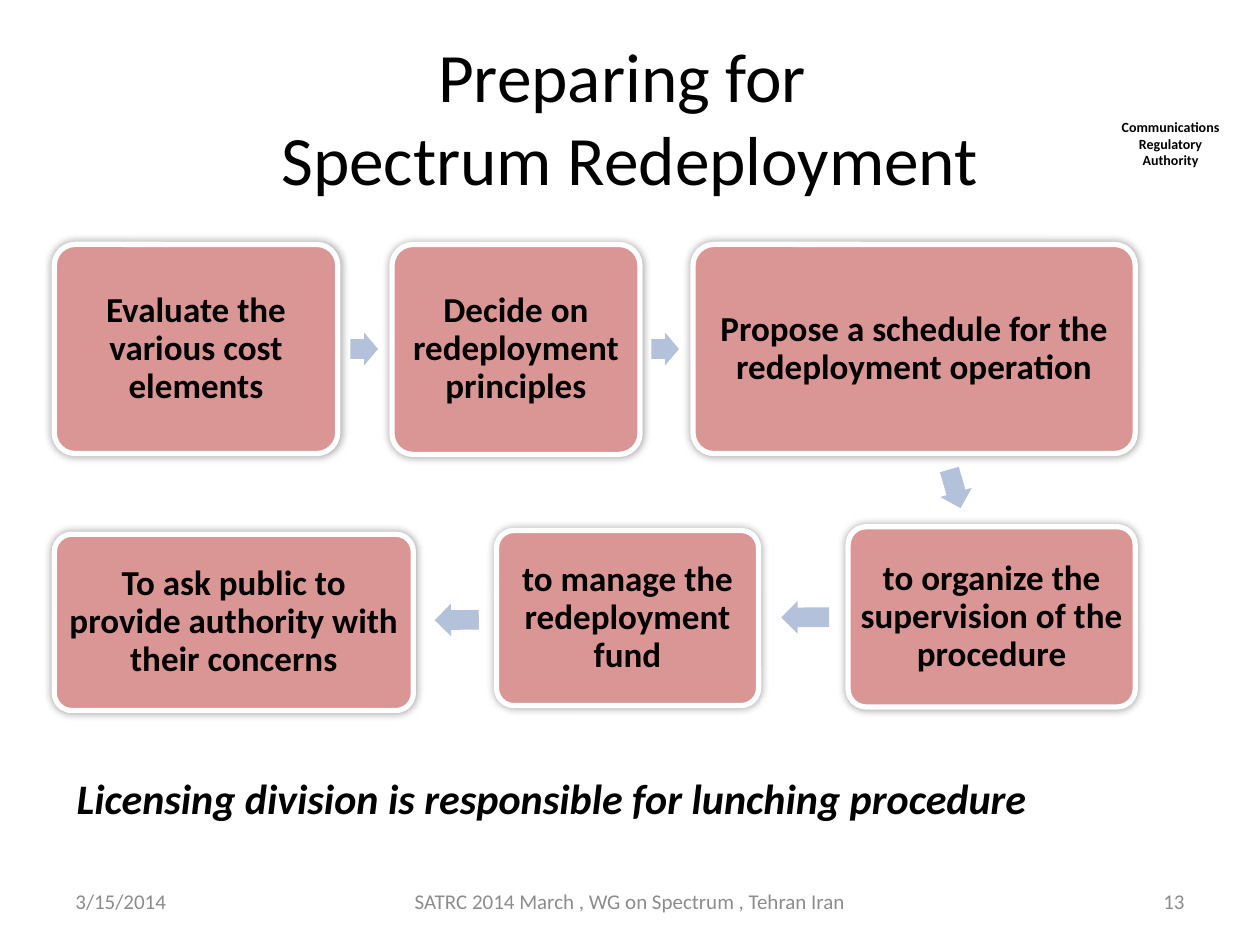
from dataclasses import dataclass

from lxml import etree
from pptx import Presentation
from pptx.dml.color import RGBColor
from pptx.enum import shapes, text
from pptx.oxml import ns
from pptx.util import Pt


@dataclass(frozen=True)
class Theme:
    font: str = "Calibri"
    ink: str = "000000"
    muted: str = "8C8C8C"
    step_fill: str = "D99694"
    step_line: str = "FFFFFF"
    arrow_fill: str = "B3C1DB"
    title_size: float = 39.6
    remark_size: float = 24
    step_size: float = 20
    footer_size: float = 12
    authority_size: float = 8


@dataclass(frozen=True)
class Box:
    left: float
    top: float
    width: float
    height: float

    def lengths(self):
        return Pt(self.left), Pt(self.top), Pt(self.width), Pt(self.height)


@dataclass(frozen=True)
class Step:
    wording: str
    box: Box


@dataclass(frozen=True)
class Arrow:
    left: float
    top: float
    length: float
    rotation: float = 0


THEME = Theme()
LEFT = text.PP_ALIGN.LEFT
CENTER = text.PP_ALIGN.CENTER
RIGHT = text.PP_ALIGN.RIGHT
MIDDLE = text.MSO_ANCHOR.MIDDLE
ARROW_HEIGHT = 18.7
STEP_INSET = 2.5

STEPS = [
    Step("Evaluate the various cost elements", Box(31, 139.7, 162, 119.5)),
    Step("Decide on redeployment principles", Box(224, 139.7, 141.8, 120)),
    Step("Propose a schedule for the redeployment operation", Box(396, 139.7, 252.7, 119.5)),
    Step("to organize the supervision of the procedure", Box(484.6, 301, 164.1, 103)),
    Step("to manage the redeployment fund", Box(283.7, 303.1, 149.8, 100.1)),
    Step("To ask public to provide authority with their concerns", Box(31, 305.3, 205.2, 100.8)),
]
ARROWS = [
    Arrow(200.2, 190.1, 15.8),
    Arrow(372.2, 190.1, 15.8),
    Arrow(534.2, 270, 23, 73.8),
    Arrow(446.4, 343.4, 27.4, 179.8),
    Arrow(248.4, 344.9, 25.2, 179.3),
]
FOOTERS = [
    ("3/15/2014", Box(36, 500.5, 168, 28.8), LEFT),
    ("SATRC 2014 March , WG on Spectrum , Tehran Iran", Box(224, 500.5, 272, 28.8), CENTER),
    ("13", Box(516, 500.5, 168, 28.8), RIGHT),
]


def write(shape, wording: str, size: float, align, color: str = THEME.ink,
          bold: bool = False, italic: bool = False, anchor=text.MSO_ANCHOR.TOP):
    """Fill a shape with one formatted paragraph and return the paragraph."""
    frame = shape.text_frame
    frame.word_wrap = True
    frame.auto_size = text.MSO_AUTO_SIZE.NONE
    frame.vertical_anchor = anchor
    paragraph = frame.paragraphs[0]
    paragraph.text = wording
    paragraph.alignment = align
    font = paragraph.font
    font.name, font.size = THEME.font, Pt(size)
    font.bold, font.italic = bold, italic
    font.color.rgb = RGBColor.from_string(color)
    return paragraph


def add_glow_shadow(shape) -> None:
    """Soft dark shadow spread evenly around the shape."""
    shape.shadow.inherit = False
    effects = shape.element.spPr.find(ns.qn("a:effectLst"))
    shadow = etree.SubElement(effects, ns.qn("a:outerShdw"),
                              blurRad=str(Pt(5)), dist="0", rotWithShape="0")
    color = etree.SubElement(shadow, ns.qn("a:srgbClr"), val=THEME.ink)
    etree.SubElement(color, ns.qn("a:alpha"), val="40000")


def draw_step(slide, step: Step) -> None:
    card = slide.shapes.add_shape(shapes.MSO_SHAPE.ROUNDED_RECTANGLE, *step.box.lengths())
    card.adjustments[0] = 0.1
    card.fill.solid()
    card.fill.fore_color.rgb = RGBColor.from_string(THEME.step_fill)
    card.line.color.rgb = RGBColor.from_string(THEME.step_line)
    card.line.width = Pt(3)
    add_glow_shadow(card)
    frame = card.text_frame
    frame.margin_left = frame.margin_right = Pt(STEP_INSET)
    frame.margin_top = frame.margin_bottom = Pt(STEP_INSET)
    label = write(card, step.wording, THEME.step_size, CENTER, bold=True, anchor=MIDDLE)
    label.line_spacing = 0.9


def draw_arrow(slide, arrow: Arrow) -> None:
    box = Box(arrow.left, arrow.top, arrow.length, ARROW_HEIGHT)
    pointer = slide.shapes.add_shape(shapes.MSO_SHAPE.RIGHT_ARROW, *box.lengths())
    pointer.adjustments[0] = 0.6
    pointer.adjustments[1] = 0.5
    pointer.rotation = arrow.rotation
    pointer.fill.solid()
    pointer.fill.fore_color.rgb = RGBColor.from_string(THEME.arrow_fill)
    pointer.line.fill.background()
    pointer.shadow.inherit = False


def draw_text(slide, box: Box, wording: str, size: float, align, **style) -> None:
    write(slide.shapes.add_textbox(*box.lengths()), wording, size, align, **style)


def main() -> None:
    deck = Presentation()
    deck.slide_width, deck.slide_height = Pt(720), Pt(540)
    slide = deck.slides.add_slide(deck.slide_layouts[5])

    # Title and authority name
    title = slide.shapes.title
    title.left, title.top, title.width, title.height = Box(36, 21.6, 648, 90).lengths()
    write(title, "Preparing for \vSpectrum Redeployment", THEME.title_size, CENTER, anchor=MIDDLE)
    draw_text(slide, Box(632.2, 64.1, 73.4, 36), "Communications Regulatory Authority",
              THEME.authority_size, CENTER, bold=True)

    # Process: left to right, down, then back to the left
    for step in STEPS:
        draw_step(slide, step)
    for arrow in ARROWS:
        draw_arrow(slide, arrow)

    # Closing remark
    draw_text(slide, Box(36.7, 437.8, 617.8, 36),
              "Licensing division is responsible for lunching procedure",
              THEME.remark_size, LEFT, bold=True, italic=True)

    # Footer
    for wording, box, align in FOOTERS:
        draw_text(slide, box, wording, THEME.footer_size, align,
                  color=THEME.muted, anchor=MIDDLE)

    deck.save("out.pptx")


if __name__ == "__main__":
    main()
